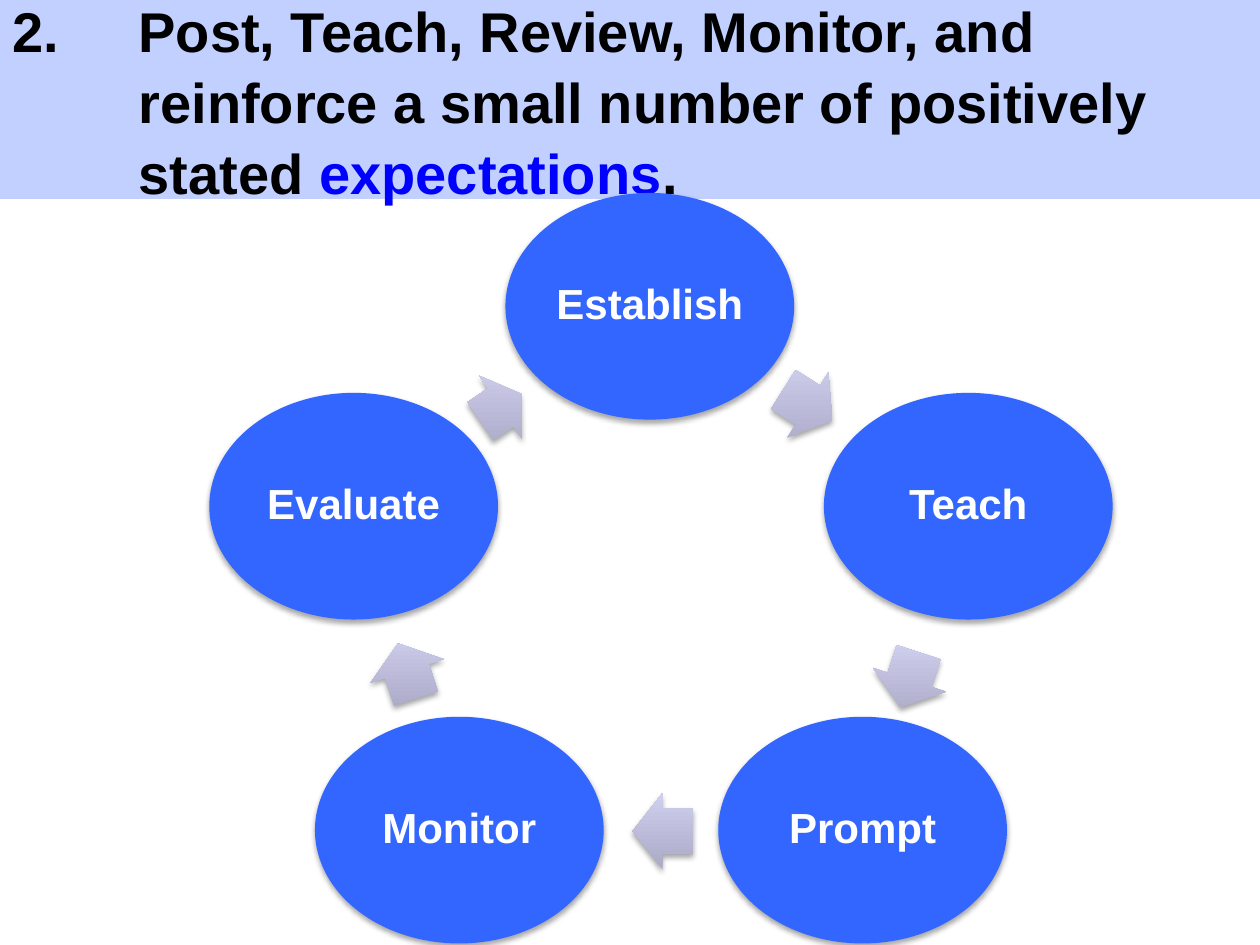
from lxml import etree
from pptx import Presentation
from pptx.dml.color import RGBColor
from pptx.enum import shapes, text
from pptx.oxml import ns
from pptx.util import Cm, Pt

COLORS = {
    "blue": "3366FF",
    "highlight": "0000FF",
    "black": "000000",
    "white": "FFFFFF",
    "arrow_dark": "AAAAC7",
    "arrow_light": "D0D0EF",
}
STAGE_SIZE = (5.82, 4.57)
STAGES = [
    ("Establish", 10.19, 3.89),
    ("Teach", 16.61, 7.92),
    ("Prompt", 14.48, 14.45),
    ("Monitor", 6.35, 14.45),
    ("Evaluate", 4.22, 7.92),
]
ARROW_HEIGHT = 1.55
ARROWS = [
    (15.7, 7.39, 1.17, 32.2),
    (17.75, 12.93, 1.17, 108),
    (12.75, 15.98, 1.22, 180),
    (7.62, 12.75, 1.17, 252),
    (9.6, 7.44, 0.99, 325.9),
]


def rgb(name):
    return RGBColor.from_string(COLORS[name])


def add_text(paragraph, wording, size=32, color="black", bold=True):
    run = paragraph.add_run()
    run.text = wording
    run.font.name = "Arial"
    run.font.size = Pt(size)
    run.font.bold = bold
    run.font.color.rgb = rgb(color)


def add_shadow(shape):
    effects = etree.SubElement(shape._element.spPr, ns.qn("a:effectLst"))
    shadow = etree.SubElement(
        effects, ns.qn("a:outerShdw"), blurRad="40000", dist="23000",
        dir="5400000", rotWithShape="0")
    shade = etree.SubElement(shadow, ns.qn("a:srgbClr"), val=COLORS["black"])
    etree.SubElement(shade, ns.qn("a:alpha"), val="35000")


def set_title(title):
    title.left, title.top, title.width, title.height = Cm(0), Cm(0), Cm(25.4), Cm(4.01)
    title.fill.solid()
    title.fill.fore_color.rgb = rgb("blue")
    tint = title._element.spPr.find(".//" + ns.qn("a:srgbClr"))
    etree.SubElement(tint, ns.qn("a:alpha"), val="30000")

    frame = title.text_frame
    frame.word_wrap = True
    frame.auto_size = text.MSO_AUTO_SIZE.NONE
    frame.vertical_anchor = text.MSO_ANCHOR.MIDDLE
    heading = frame.paragraphs[0]
    heading.alignment = text.PP_ALIGN.LEFT
    heading.line_spacing = 1.05
    indents = heading._p.get_or_add_pPr()
    indents.set("marL", str(Cm(2.54)))
    indents.set("indent", str(Cm(-2.54)))
    add_text(heading, "2.\tPost, Teach, Review, Monitor, and reinforce "
                      "a small number of positively stated ")
    add_text(heading, "expectations", color="highlight")
    add_text(heading, ".")


def add_stage(cycle, wording, left, top):
    width, height = STAGE_SIZE
    stage = cycle.add_shape(
        shapes.MSO_SHAPE.OVAL, Cm(left), Cm(top), Cm(width), Cm(height))
    stage.fill.solid()
    stage.fill.fore_color.rgb = rgb("blue")
    stage.line.fill.background()
    add_shadow(stage)

    frame = stage.text_frame
    frame.word_wrap = True
    frame.vertical_anchor = text.MSO_ANCHOR.MIDDLE
    frame.margin_left = frame.margin_right = Cm(0.08)
    frame.margin_top = frame.margin_bottom = Cm(0.08)
    label = frame.paragraphs[0]
    label.alignment = text.PP_ALIGN.CENTER
    label.line_spacing = 0.9
    add_text(label, wording, size=24, color="white")


def add_arrow(cycle, left, top, width, rotation):
    arrow = cycle.add_shape(
        shapes.MSO_SHAPE.RIGHT_ARROW, Cm(left), Cm(top), Cm(width), Cm(ARROW_HEIGHT))
    arrow.adjustments[0] = 0.6
    arrow.adjustments[1] = 0.5
    arrow.rotation = rotation
    arrow.fill.gradient()
    arrow.fill.gradient_angle = 90
    for stop, color in zip(arrow.fill.gradient_stops, ("arrow_dark", "arrow_light")):
        stop.color.rgb = rgb(color)
    arrow._element.spPr.find(ns.qn("a:gradFill")).set("rotWithShape", "0")
    arrow.line.fill.background()
    add_shadow(arrow)


def main():
    deck = Presentation()
    deck.slide_width, deck.slide_height = Cm(25.4), Cm(19.05)
    slide = deck.slides.add_slide(deck.slide_layouts[5])
    set_title(slide.shapes.title)
    cycle = slide.shapes.add_group_shape().shapes
    for stage, arrow in zip(STAGES, ARROWS):
        add_stage(cycle, *stage)
        add_arrow(cycle, *arrow)
    deck.save("out.pptx")


if __name__ == "__main__":
    main()
